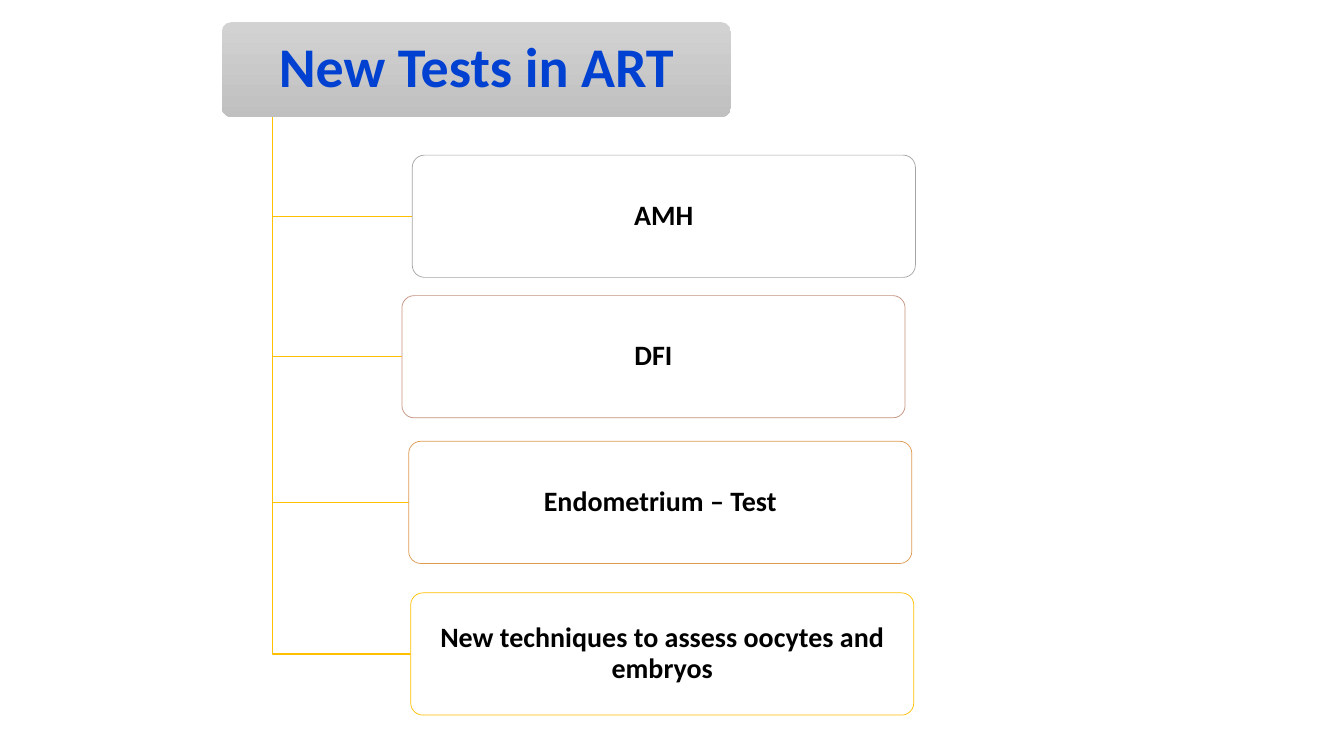
from lxml import etree
from pptx import Presentation
from pptx.dml.color import RGBColor
from pptx.enum.shapes import MSO_SHAPE
from pptx.enum.text import MSO_ANCHOR, PP_ALIGN
from pptx.oxml.ns import qn
from pptx.util import Cm, Pt

ROUNDED = MSO_SHAPE.ROUNDED_RECTANGLE
MIDDLE = MSO_ANCHOR.MIDDLE
CENTER = PP_ALIGN.CENTER

TITLE_BOX = (5.59, 0.56, 12.83, 2.39)
TEST_WIDTH, TEST_HEIGHT = 12.68, 3.08
TESTS = [
    ("AMH", 10.39, 3.91, "A5A5A5"),
    ("DFI", 10.13, 7.45, "C4917F"),
    ("Endometrium – Test", 10.3, 11.12, "DE9A50"),
    ("New techniques to assess oocytes and embryos", 10.35, 14.94, "FFC000"),
]


def color(code):
    return RGBColor.from_string(code)


def add_rounded_box(page, box, text, size, text_color, margin):
    shape = page.shapes.add_shape(ROUNDED, *[Cm(length) for length in box])
    shape.adjustments[0] = 0.1
    shape.shadow.inherit = False
    frame = shape.text_frame
    frame.word_wrap = True
    frame.vertical_anchor = MIDDLE
    frame.margin_left = frame.margin_right = Cm(margin)
    frame.text = text
    para = frame.paragraphs[0]
    para.alignment = CENTER
    para.line_spacing = 0.9
    font = para.runs[0].font
    font.name = "Calibri"
    font.size = Pt(size)
    font.bold = True
    font.color.rgb = color(text_color)
    return shape


def add_title(page, box):
    shape = add_rounded_box(page, box, "New Tests in ART", 40, "0041D2", 0.28)
    shape.fill.gradient()
    shape.fill.gradient_angle = 270
    for stop, code in zip(shape.fill.gradient_stops, ("D2D2D2", "C0C0C0")):
        stop.color.rgb = color(code)
    shape.line.fill.background()


def add_branch(page, title_box, test_box):
    left, top, width, height = title_box
    trunk = Cm(left + width / 10)
    middle = Cm(test_box[1] + test_box[3] / 2)
    builder = page.shapes.build_freeform(trunk, Cm(top + height))
    builder.add_line_segments(
        [(trunk, middle), (Cm(test_box[0]), middle)], close=False
    )
    branch = builder.convert_to_shape()
    branch.shadow.inherit = False
    branch.fill.background()
    branch.line.color.rgb = color("FFC000")
    branch.line.width = Pt(1)


def add_test(page, box, text, outline):
    shape = add_rounded_box(page, box, text, 20, "000000", 0.19)
    shape.fill.solid()
    shape.fill.fore_color.rgb = color("FFFFFF")
    fill_color = shape.fill._xPr.find(qn("a:solidFill"))[0]
    etree.SubElement(fill_color, qn("a:alpha")).set("val", "90000")
    shape.line.color.rgb = color(outline)
    shape.line.width = Pt(0.5)


def build_tests_slide(page):
    add_title(page, TITLE_BOX)
    for text, left, top, outline in TESTS:
        box = (left, top, TEST_WIDTH, TEST_HEIGHT)
        add_branch(page, TITLE_BOX, box)
        add_test(page, box, text, outline)


def main():
    deck = Presentation()
    deck.slide_width = Cm(33.87)
    deck.slide_height = Cm(19.05)
    build_tests_slide(deck.slides.add_slide(deck.slide_layouts[6]))
    deck.save("out.pptx")


if __name__ == "__main__":
    main()
